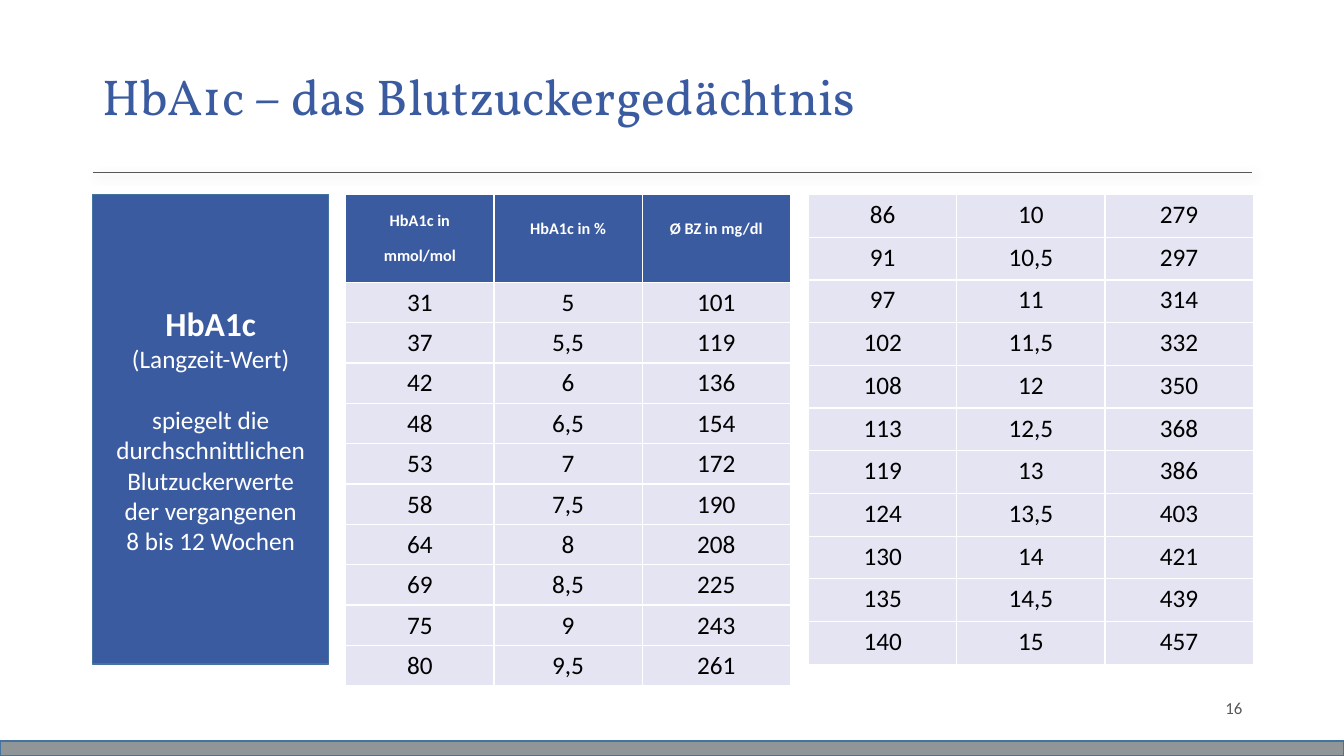
import lxml.etree
import pptx
import pptx.dml.color
import pptx.enum.shapes
import pptx.enum.text
import pptx.oxml
import pptx.oxml.ns
import pptx.util

Inches = pptx.util.Inches
Pt = pptx.util.Pt
ALIGN = pptx.enum.text.PP_ALIGN
MIDDLE = pptx.enum.text.MSO_ANCHOR.MIDDLE

COLORS = {
    "blue": "3B5BA1",
    "outline": "43739E",
    "bar": "909698",
    "gray": "575756",
    "cell": "E4E4F2",
    "white": "FFFFFF",
    "black": "000000",
}

# Header text with the top margin that places it in its cell
HEADERS = [("HbA1c in\vmmol/mol", 0.14), ("HbA1c in %", 0.22), ("Ø BZ in mg/dl", 0.22)]
LOW_VALUES = [
    ("31", "5", "101"), ("37", "5,5", "119"), ("42", "6", "136"),
    ("48", "6,5", "154"), ("53", "7", "172"), ("58", "7,5", "190"),
    ("64", "8", "208"), ("69", "8,5", "225"), ("75", "9", "243"),
    ("80", "9,5", "261"),
]
HIGH_VALUES = [
    ("86", "10", "279"), ("91", "10,5", "297"), ("97", "11", "314"),
    ("102", "11,5", "332"), ("108", "12", "350"), ("113", "12,5", "368"),
    ("119", "13", "386"), ("124", "13,5", "403"), ("130", "14", "421"),
    ("135", "14,5", "439"), ("140", "15", "457"),
]

LEFT, WIDTH = 0.92, 11.5
TOP, HEIGHT = 1.93, 4.66
TABLE_WIDTH = 4.41
HEADER_HEIGHT, ROW_HEIGHT = 0.87, 0.4


def rgb(name):
    return pptx.dml.color.RGBColor.from_string(COLORS[name])


def style_paragraph(paragraph, size, color, align, font="Calibri", bold=False):
    paragraph.alignment = align
    paragraph.font.name = font
    paragraph.font.size = Pt(size)
    paragraph.font.bold = bold
    paragraph.font.color.rgb = rgb(color)


def add_box(slide, box, fill):
    shape = slide.shapes.add_shape(
        pptx.enum.shapes.MSO_SHAPE.RECTANGLE, *map(Inches, box))
    shape.shadow.inherit = False
    shape.fill.solid()
    shape.fill.fore_color.rgb = rgb(fill)
    shape.line.color.rgb = rgb("outline")
    shape.line.width = Pt(1)
    return shape


def add_text(slide, box, text, size, color, align, font="Calibri"):
    frame = slide.shapes.add_textbox(*map(Inches, box)).text_frame
    frame.word_wrap = True
    frame.vertical_anchor = MIDDLE
    frame.text = text
    style_paragraph(frame.paragraphs[0], size, color, align, font)
    return frame.paragraphs[0]


def add_rule(slide, left, top, width):
    line = slide.shapes.add_connector(
        pptx.enum.shapes.MSO_CONNECTOR.STRAIGHT,
        Inches(left), Inches(top), Inches(left + width), Inches(top))
    line.line.color.rgb = rgb("gray")
    line.line.width = Pt(0.5)
    # Soft shadow below the rule
    qn = pptx.oxml.ns.qn
    properties = line._element.spPr
    effects = lxml.etree.SubElement(properties, qn("a:effectLst"))
    shadow = lxml.etree.SubElement(
        effects, qn("a:outerShdw"), blurRad=str(Pt(7)), dist=str(Pt(3)), dir="2700000")
    color = lxml.etree.SubElement(shadow, qn("a:srgbClr"), val=COLORS["gray"])
    lxml.etree.SubElement(color, qn("a:alpha"), val="50000")


def add_frame(slide):
    add_box(slide, (0, 7.35, 13.33, 0.15), "bar")
    add_rule(slide, LEFT, 1.71, WIDTH)
    add_text(slide, (LEFT + WIDTH - 3, 6.82, 3, 0.4), "16", 12, "gray", ALIGN.RIGHT)
    title = add_text(slide, (LEFT, 0.39, 8.66, 1.18), "HbA1c – das Blutzuckergedächtnis",
                     36, "blue", ALIGN.LEFT, "Vollkorn")
    title.line_spacing = 0.9


def add_explanation(slide, box):
    frame = add_box(slide, box, "blue").text_frame
    frame.word_wrap = True
    frame.vertical_anchor = MIDDLE
    frame.text = ("HbA1c\n(Langzeit-Wert)\nspiegelt die durchschnittlichen "
                  "Blutzuckerwerte\vder vergangenen\v8 bis 12 Wochen")
    heading, subtitle, body = frame.paragraphs
    style_paragraph(heading, 24, "white", ALIGN.CENTER, bold=True)
    for paragraph in (subtitle, body):
        style_paragraph(paragraph, 18, "white", ALIGN.CENTER)
    body.space_before = Pt(22)


def fill_cell(cell, text, size, color, fill, bold=False):
    cell.fill.solid()
    cell.fill.fore_color.rgb = rgb(fill)
    cell.text = text
    style_paragraph(cell.text_frame.paragraphs[0], size, color, ALIGN.CENTER, bold=bold)


def add_value_table(slide, box, values, row_height, headers=()):
    first_value_row = 1 if headers else 0
    table = slide.shapes.add_table(
        len(values) + first_value_row, len(values[0]), *map(Inches, box)).table
    table.first_row = bool(headers)
    table.horz_banding = False
    for column in table.columns:
        column.width = Inches(box[2] / len(values[0]))
    for row in table.rows:
        row.height = Inches(row_height)

    # Raised header text
    if headers:
        table.rows[0].height = Inches(HEADER_HEIGHT)
    for column, (text, margin) in enumerate(headers):
        cell = table.cell(0, column)
        fill_cell(cell, text, 20, "white", "blue", bold=True)
        cell.margin_top = Inches(margin)
        for run in cell.text_frame.paragraphs[0].runs:
            run.font._element.set("baseline", "30000")

    for row, record in enumerate(values, first_value_row):
        for column, value in enumerate(record):
            fill_cell(table.cell(row, column), value, 18, "black", "cell")


def main():
    presentation = pptx.Presentation()
    presentation.slide_width = Inches(13.33)
    presentation.slide_height = Inches(7.5)
    slide = presentation.slides.add_slide(presentation.slide_layouts[6])

    add_frame(slide)
    add_value_table(slide, (3.43, TOP, TABLE_WIDTH, HEIGHT), LOW_VALUES, ROW_HEIGHT, HEADERS)
    add_value_table(slide, (8.02, TOP, TABLE_WIDTH, HEIGHT), HIGH_VALUES,
                    HEIGHT / len(HIGH_VALUES))
    add_explanation(slide, (LEFT, TOP, 2.34, HEIGHT))

    presentation.save("out.pptx")


if __name__ == "__main__":
    main()
